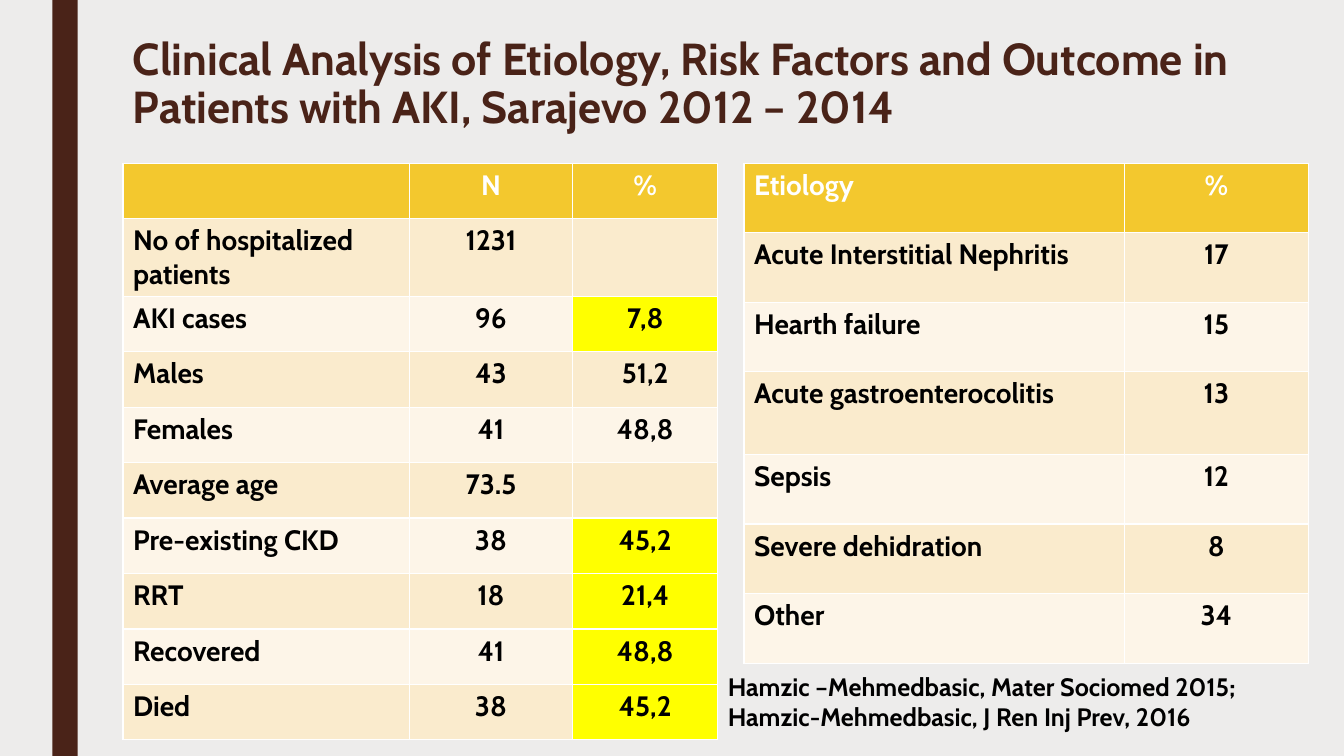
from pptx import Presentation
from pptx.dml.color import RGBColor
from pptx.enum.shapes import MSO_SHAPE as Shape
from pptx.enum.text import PP_ALIGN as Align
from pptx.util import Inches, Pt

BROWN, GOLD, YELLOW = "4A2318", "F3C82E", "FFFF00"
BANDS = ["FDF5E8", "FAEBCD"]


def paint(fill, color):
    fill.solid()
    fill.fore_color.rgb = RGBColor.from_string(color)


def write(frame, text, size, color, align=Align.LEFT):
    frame.word_wrap = True
    paragraph = frame.paragraphs[0]
    paragraph.alignment = align
    run = paragraph.add_run()
    run.text = text
    run.font.name, run.font.size, run.font.bold = "Cabin", Pt(size), True
    paint(run.font.fill, color)
    return paragraph


deck = Presentation()
deck.slide_width, deck.slide_height = Inches(13.33), Inches(7.5)
slide = deck.slides.add_slide(deck.slide_layouts[6])
paint(slide.background.fill, "EDECEB")

stripe = slide.shapes.add_shape(
    Shape.RECTANGLE, Inches(0.52), 0, Inches(0.25), deck.slide_height)
stripe.shadow.inherit = False
paint(stripe.fill, BROWN)
stripe.line.fill.background()

title = slide.shapes.add_textbox(Inches(1.22), Inches(0.32), Inches(11.53), Inches(1.09))
heading = write(
    title.text_frame,
    "Clinical Analysis of Etiology, Risk Factors and Outcome in Patients with AKI, Sarajevo 2012 – 2014",
    32, BROWN)
heading.line_spacing = 0.89

patients = [
    ("", "N", "%"),
    ("No of hospitalized patients", "1231", ""),
    ("AKI cases", "96", "7,8"),
    ("Males", "43", "51,2"),
    ("Females", "41", "48,8"),
    ("Average age", "73.5", ""),
    ("Pre-existing CKD", "38", "45,2"),
    ("RRT", "18", "21,4"),
    ("Recovered", "41", "48,8"),
    ("Died", "38", "45,2"),
]
etiology = [
    ("Etiology", "%"),
    ("Acute Interstitial Nephritis", "17"),
    ("Hearth failure", "15"),
    ("Acute gastroenterocolitis", "13"),
    ("Sepsis", "12"),
    ("Severe dehidration", "8"),
    ("Other", "34"),
]
highlighted = {"AKI cases", "Pre-existing CKD", "RRT", "Recovered", "Died"}

for rows, left, widths, row_height, tall_row, tall_height in [
    (patients, 1.22, [2.84, 1.62, 1.44], 0.55, 1, 0.77),
    (etiology, 7.38, [3.77, 1.83], 0.69, 3, 0.82),
]:
    heights = [row_height] * len(rows)
    heights[tall_row] = tall_height
    grid = slide.shapes.add_table(
        len(rows), len(widths), Inches(left), Inches(1.62),
        Inches(sum(widths)), Inches(sum(heights))).table
    for column, width in zip(grid.columns, widths):
        column.width = Inches(width)
    for r, (row, height) in enumerate(zip(rows, heights)):
        grid.rows[r].height = Inches(height)
        for c, text in enumerate(row):
            cell = grid.cell(r, c)
            marked = c == 2 and row[0] in highlighted
            paint(cell.fill, GOLD if r == 0 else YELLOW if marked else BANDS[r % 2])
            if text:
                write(cell.text_frame, text, 20, "000000" if r else "FFFFFF",
                      Align.CENTER if c else Align.LEFT)

citation = slide.shapes.add_textbox(Inches(7.12), Inches(6.61), Inches(6.02), Inches(0.71))
write(citation.text_frame,
      "Hamzic –Mehmedbasic, Mater Sociomed 2015; Hamzic-Mehmedbasic, J Ren Inj Prev, 2016",
      18, "000000")

deck.save("out.pptx")
